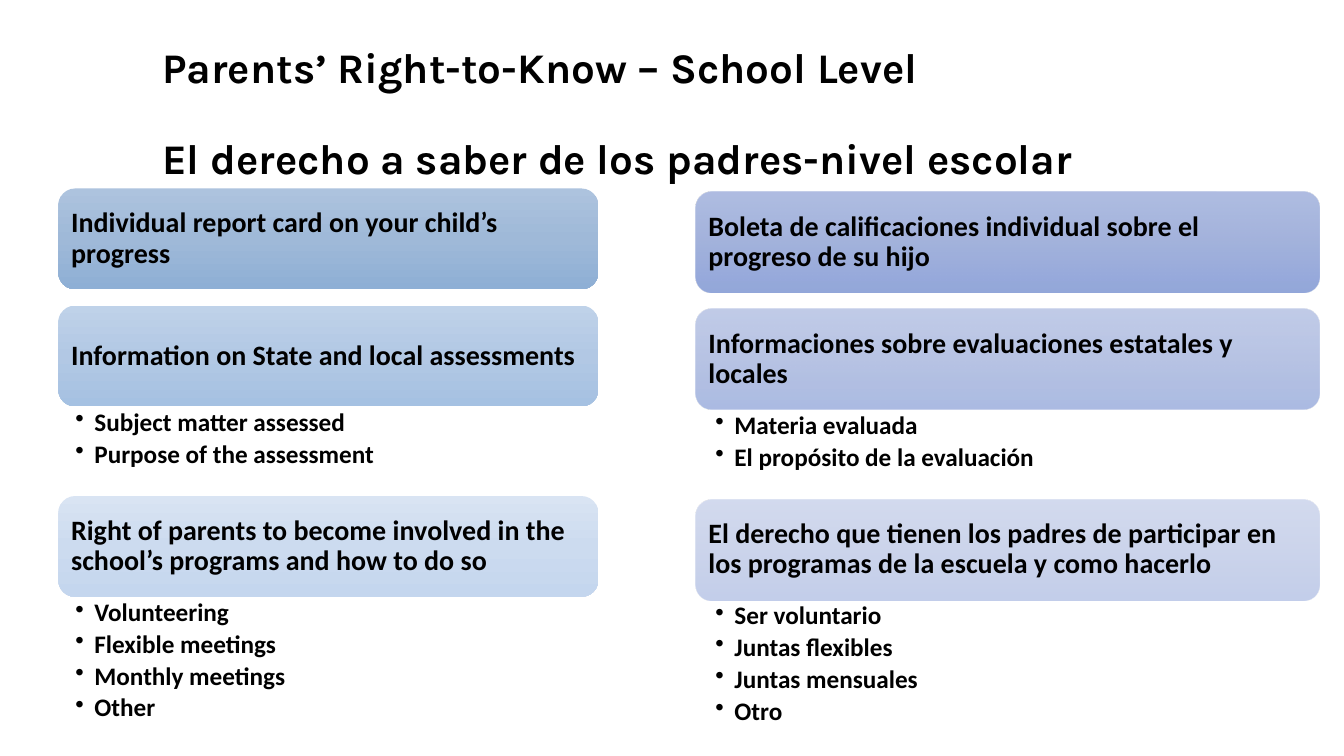
"""Build the bilingual slide on what parents have a right to know at school level."""
from copy import deepcopy
from dataclasses import dataclass

from lxml import etree
from pptx import Presentation
from pptx import util as u
from pptx.dml import color
from pptx.enum import shapes, text
from pptx.oxml import ns


@dataclass(frozen=True)
class Theme:
    ink: str = "000000"
    title_font: str = "Karla"
    body_font: str = "Calibri"
    title_size: float = 30.1
    topic_size: float = 20
    detail_size: float = 18
    english_fills: tuple = (
        (("ADC3DE", "9FB9D8", "8EAFD5"), 100),
        (("BFD2E9", "B2C8E4", "A5C1E2"), 100),
        (("D9E4F3", "CCDBEF", "C4D6EE"), 100),
    )
    spanish_fills: tuple = tuple((("A8B7DF", "9AABD9", "889ED7"), opacity) for opacity in (90, 70, 50))


theme = Theme()


def write(frame, lines, font=theme.body_font, size=theme.topic_size, anchor=text.MSO_ANCHOR.MIDDLE,
          insets=(0.2, 0.2, 0.2, 0.2), space_after=0, bullet=None):
    """Fill a text frame with one paragraph per line."""
    frame.word_wrap = True
    frame.vertical_anchor = anchor
    frame.margin_left, frame.margin_top, frame.margin_right, frame.margin_bottom = map(u.Cm, insets)
    for index, line in enumerate(lines):
        paragraph = frame.add_paragraph() if index else frame.paragraphs[0]
        paragraph.alignment = text.PP_ALIGN.LEFT
        paragraph.line_spacing = 0.9
        paragraph.space_after = u.Pt(space_after)
        run = paragraph.add_run()
        run.text = line
        run.font.name, run.font.size, run.font.bold = font, u.Pt(size), True
        run.font.color.rgb = color.RGBColor.from_string(theme.ink)
        if bullet:
            properties = paragraph._p.get_or_add_pPr()
            properties.set("marL", str(u.Cm(0.48)))
            properties.set("indent", str(-u.Cm(0.48)))
            etree.SubElement(properties, ns.qn("a:buChar")).set("char", bullet)


def shade(fill, colours, opacity):
    """Give a fill a top-to-bottom gradient with evenly spaced colours."""
    fill.gradient()
    fill.gradient_angle = 270
    stop_list = fill._fill._gradFill.find(ns.qn("a:gsLst"))
    stop_list.insert(1, deepcopy(stop_list[0]))
    for index, (stop, colour) in enumerate(zip(fill.gradient_stops, colours)):
        stop.position = index / (len(colours) - 1)
        stop.color.rgb = color.RGBColor.from_string(colour)
        if opacity < 100:
            rgb = stop_list[index].find(ns.qn("a:srgbClr"))
            etree.SubElement(rgb, ns.qn("a:alpha")).set("val", str(opacity * 1000))


presentation = Presentation()
presentation.slide_width, presentation.slide_height = u.Cm(33.87), u.Cm(19.05)
slide = presentation.slides.add_slide(presentation.slide_layouts[6])

heading = slide.shapes.add_textbox(u.Cm(3.84), u.Cm(1.12), u.Cm(26.16), u.Cm(3.58))
write(
    heading.text_frame,
    ["Parents’ Right-to-Know – School Level", "El derecho a saber de los padres-nivel escolar"],
    font=theme.title_font, size=theme.title_size, insets=(0.25, 0, 0.25, 0),
)
heading.text_frame.paragraphs[0].space_after = u.Pt(32.8)

english = [
    ("Individual report card on your child’s progress", []),
    ("Information on State and local assessments", ["Subject matter assessed", "Purpose of the assessment"]),
    ("Right of parents to become involved in the school’s programs and how to do so",
     ["Volunteering", "Flexible meetings", "Monthly meetings", "Other"]),
]
spanish = [
    ("Boleta de calificaciones individual sobre el progreso de su hijo", []),
    ("Informaciones sobre evaluaciones estatales y locales", ["Materia evaluada", "El propósito de la evaluación"]),
    ("El derecho que tienen los padres de participar en los programas de la escuela y como hacerlo",
     ["Ser voluntario", "Juntas flexibles", "Juntas mensuales", "Otro"]),
]
columns = [
    (english, theme.english_fills, 1.47, 4.75, 13.61, 0.43),
    (spanish, theme.spanish_fills, 17.53, 4.83, 15.72, 0.5),
]
topic_height, topic_gap = 2.54, 0.41

for topics, fills, left, top, width, detail_inset in columns:
    for (topic, details), (colours, opacity) in zip(topics, fills):
        card = slide.shapes.add_shape(
            shapes.MSO_SHAPE.ROUNDED_RECTANGLE, u.Cm(left), u.Cm(top), u.Cm(width), u.Cm(topic_height))
        card.shadow.inherit = False
        card.line.fill.background()
        shade(card.fill, colours, opacity)
        write(card.text_frame, [topic])
        top += topic_height
        if not details:
            top += topic_gap
            continue
        details_height = 1.06 + 0.6 * len(details)
        detail_list = slide.shapes.add_textbox(u.Cm(left), u.Cm(top), u.Cm(width), u.Cm(details_height))
        write(detail_list.text_frame, details, size=theme.detail_size, anchor=text.MSO_ANCHOR.TOP,
              insets=(detail_inset, 0.08, 0.36, 0.08), space_after=3.2, bullet="•")
        top += details_height

presentation.save("out.pptx")
